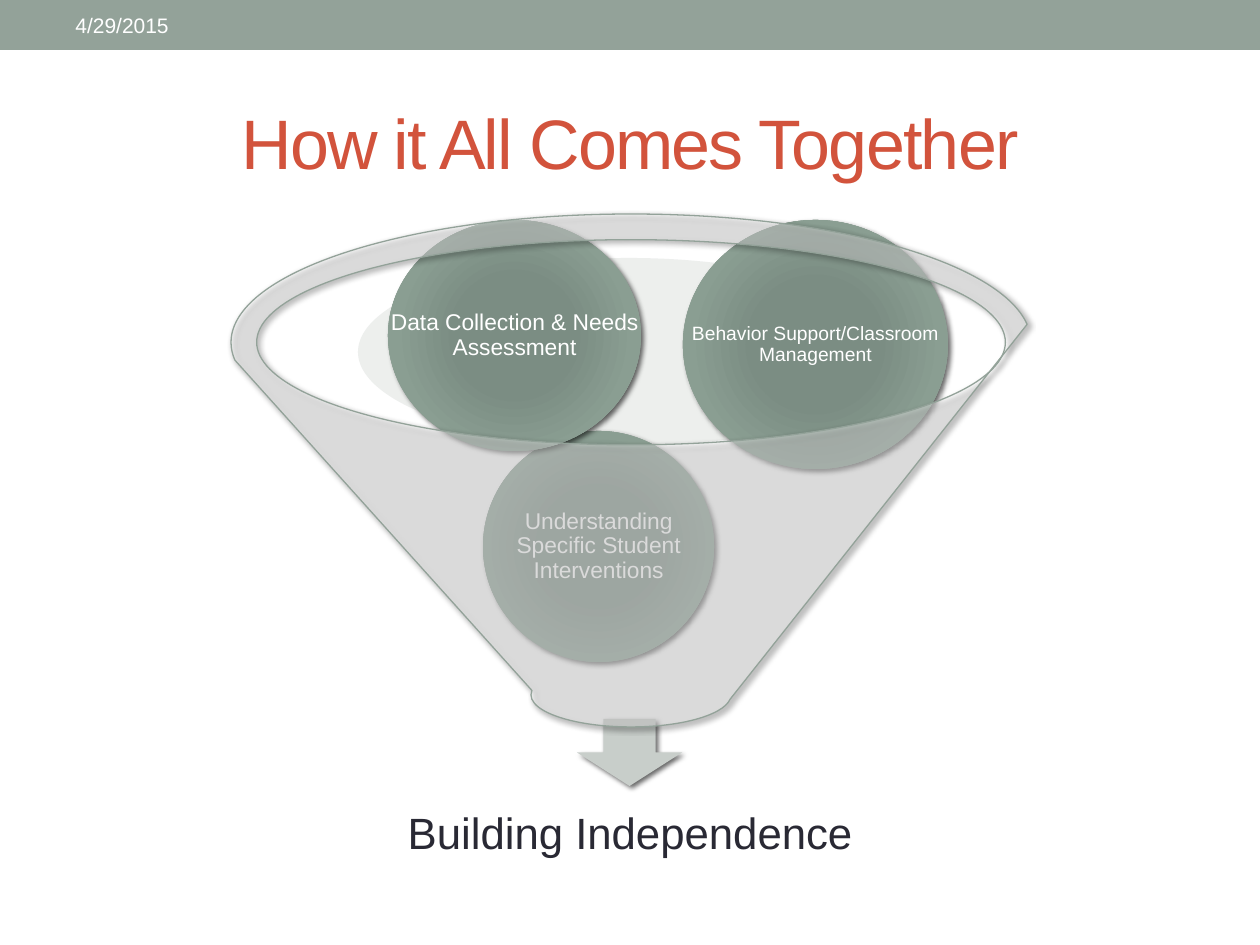
from pptx import Presentation
from pptx.dml.color import RGBColor
from pptx.enum.shapes import MSO_SHAPE
from pptx.enum.text import MSO_ANCHOR, PP_ALIGN
from pptx.oxml import parse_xml
from pptx.oxml.ns import nsdecls, qn
from pptx.util import Emu, Pt

PX = 914400 / 126
SAGE = "93A299"
BALL_STOPS = [(0, "7B8E82"), (34, "7B8D83"), (70, "8A9E92"), (100, SAGE)]


def px(n):
    return Emu(round(n * PX))


def rgb(value):
    return RGBColor.from_string(value)


def add_shape(s, kind, box, fill=None, alpha=100, shadow=False):
    sp = s.shapes.add_shape(kind, *map(px, box))
    sp.line.fill.background()
    sp.shadow.inherit = False
    if fill:
        sp.fill.solid()
        sp.fill.fore_color.rgb = rgb(fill)
        if alpha < 100:
            clr = sp._element.spPr.find(qn("a:solidFill"))[0]
            clr.append(parse_xml(f'<a:alpha {nsdecls("a")} val="{alpha * 1000}"/>'))
    if shadow:
        sp._element.spPr.find(qn("a:effectLst")).append(parse_xml(
            f'<a:outerShdw {nsdecls("a")} blurRad="{Pt(3)}" dist="{Pt(2)}" '
            'dir="2700000" rotWithShape="0"><a:srgbClr val="000000">'
            '<a:alpha val="60000"/></a:srgbClr></a:outerShdw>'))
    return sp


def add_text(s, box, text, size, color, align=PP_ALIGN.CENTER, inset=None,
             line_spacing=None):
    tf = s.shapes.add_textbox(*map(px, box)).text_frame
    tf.word_wrap = True
    tf.vertical_anchor = MSO_ANCHOR.MIDDLE
    if inset is not None:
        tf.margin_left = tf.margin_right = px(inset)
        tf.margin_top = tf.margin_bottom = px(inset)
    p = tf.paragraphs[0]
    p.text = text
    p.alignment = align
    if line_spacing:
        p.line_spacing = line_spacing
    r = p.runs[0]
    r.font.name = "Arial"
    r.font.size = Pt(size)
    r.font.color.rgb = rgb(color)
    return r


def radial_fill(sp, stops):
    gs = "".join(f'<a:gs pos="{pos * 1000}"><a:srgbClr val="{color}"/></a:gs>'
                 for pos, color in stops)
    sp._element.spPr.find(qn("a:prstGeom")).addnext(parse_xml(
        f'<a:gradFill {nsdecls("a")} rotWithShape="1"><a:gsLst>{gs}</a:gsLst>'
        '<a:path path="circle"><a:fillToRect l="100000" t="100000" '
        'r="100000" b="100000"/></a:path></a:gradFill>'))


def add_ball(s, box, text, size):
    sp = add_shape(s, MSO_SHAPE.OVAL, box, shadow=True)
    radial_fill(sp, BALL_STOPS)
    add_text(s, box, text, size, "FFFFFF", inset=2, line_spacing=0.9)


def add_header(s, box):
    x, y, w, h = box
    add_shape(s, MSO_SHAPE.RECTANGLE, box, SAGE)
    add_text(s, (x + 63, y + 3, 399, h - 5), "4/29/2015", 12, "FFFFFF",
             align=PP_ALIGN.LEFT)


def add_title(s, box):
    r = add_text(s, box, "How it All Comes Together", 40, "D2533C")
    r._r.get_or_add_rPr().set("spc", "-100")


def add_funnel(s, box):
    """Balls falling through a funnel, with an arrow to the outcome below."""
    x, y, w, h = box

    def at(dx, dy, width, height):
        return x + dx, y + dy, width, height

    add_shape(s, MSO_SHAPE.OVAL, at(127, 44, 542, 188), "D2D7D4", alpha=40)
    add_shape(s, MSO_SHAPE.DOWN_ARROW, at(346, 505, 105, 67), "C8CECA", shadow=True)
    add_text(s, at(147, h - 126, 504, 126), "Building Independence", 25, "292934",
             inset=24, line_spacing=0.9)
    balls = [
        ((252, 217, 231, 231), "Understanding Specific Student Interventions", 13),
        ((157, 6, 253, 231), "Data Collection & Needs Assessment", 13),
        ((452, 6, 265, 249), "Behavior Support/Classroom Management", 11),
    ]
    for place, text, size in balls:
        add_ball(s, at(*place), text, size)
    funnel = add_shape(s, MSO_SHAPE.FUNNEL, at(0, 0, w, 513), "FFFFFF", alpha=40,
                       shadow=True)
    funnel.line.color.rgb = rgb(SAGE)
    funnel.line.width = Pt(0.75)


def main():
    prs = Presentation()
    prs.slide_width, prs.slide_height = px(1260), px(945)
    s = prs.slides.add_slide(prs.slide_layouts[6])
    add_header(s, (0, 0, 1260, 50))
    add_title(s, (63, 73, 1134, 136))
    add_funnel(s, (231, 214, 800, 684))
    prs.save("out.pptx")


if __name__ == "__main__":
    main()
